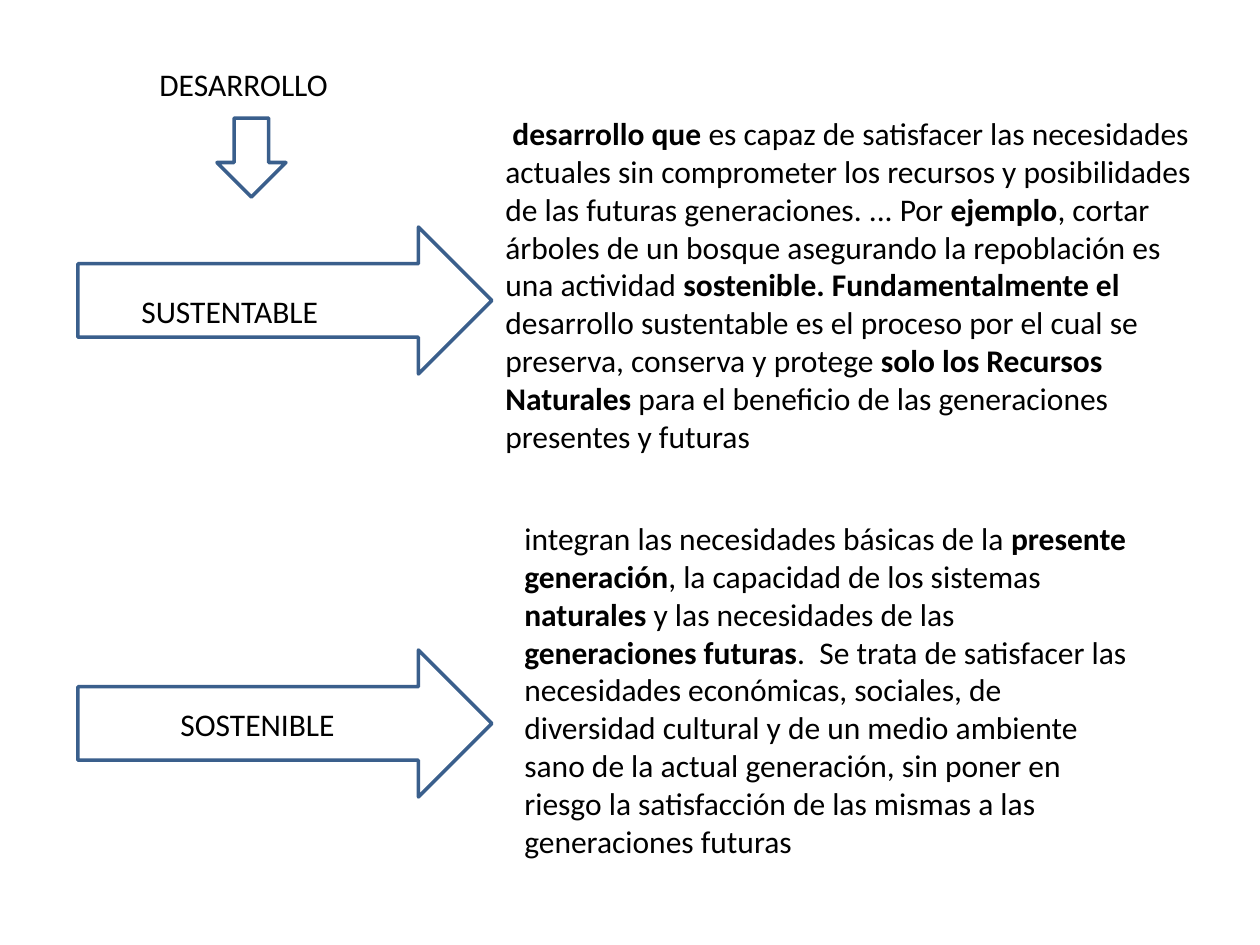
from pptx import Presentation
from pptx.dml.color import RGBColor
from pptx.enum.shapes import MSO_SHAPE
from pptx.enum.text import MSO_AUTO_SIZE
from pptx.util import Inches, Pt

RIGHT_ARROW = MSO_SHAPE.RIGHT_ARROW
DOWN_ARROW = MSO_SHAPE.DOWN_ARROW
FIT_SHAPE = MSO_AUTO_SIZE.SHAPE_TO_FIT_TEXT
PX = Inches(1) / 126
COLORS = {"outline": "3A5F8C", "text": "000000"}


def emu(*lengths):
    return [round(length * PX) for length in lengths]


class SlideBuilder:
    font = "Calibri"
    size = Pt(18)
    line_width = Pt(2)

    def __init__(self, slide):
        self.slide = slide

    def arrow(self, preset, *box):
        arrow = self.slide.shapes.add_shape(preset, *emu(*box))
        arrow.shadow.inherit = False
        arrow.fill.background()
        arrow.line.color.rgb = RGBColor.from_string(COLORS["outline"])
        arrow.line.width = self.line_width

    def text(self, box, *pieces):
        frame = self.slide.shapes.add_textbox(*emu(*box)).text_frame
        frame.word_wrap = True
        frame.auto_size = FIT_SHAPE
        for index, piece in enumerate(pieces):
            run = frame.paragraphs[0].add_run()
            run.text = piece
            run.font.name = self.font
            run.font.size = self.size
            run.font.bold = index % 2 == 1
            run.font.color.rgb = RGBColor.from_string(COLORS["text"])


def main():
    deck = Presentation()
    deck.slide_width, deck.slide_height = emu(1260, 945)
    builder = SlideBuilder(deck.slides.add_slide(deck.slide_layouts[6]))

    for top in (227, 650):
        builder.arrow(RIGHT_ARROW, 78, top, 414, 147)
    builder.text((147, 59, 246, 50), "DESARROLLO")
    builder.arrow(DOWN_ARROW, 217, 118, 69, 79)
    builder.text((168, 699, 207, 50), "SOSTENIBLE")
    builder.text((129, 286, 217, 50), "SUSTENTABLE")

    builder.text(
        (493, 108, 718, 394),
        " ",
        "desarrollo que",
        " es capaz de satisfacer las necesidades actuales sin comprometer los "
        "recursos y posibilidades de las futuras generaciones. ... Por ",
        "ejemplo",
        ", cortar árboles de un bosque asegurando la repoblación es una actividad ",
        "sostenible. Fundamentalmente el ",
        " desarrollo sustentable es el proceso por el cual se preserva, conserva "
        "y protege ",
        "solo los Recursos Naturales ",
        "para el beneficio de las generaciones presentes y futuras",
    )
    builder.text(
        (512, 513, 630, 357),
        "integran las necesidades básicas de la ",
        "presente generación",
        ", la capacidad de los sistemas ",
        "naturales",
        " y las necesidades de las ",
        "generaciones futuras",
        ".  Se trata de satisfacer las necesidades económicas, sociales, de "
        "diversidad cultural y de un medio ambiente sano de la actual generación, "
        "sin poner en riesgo la satisfacción de las mismas a las generaciones "
        "futuras",
    )
    deck.save("out.pptx")


if __name__ == "__main__":
    main()
